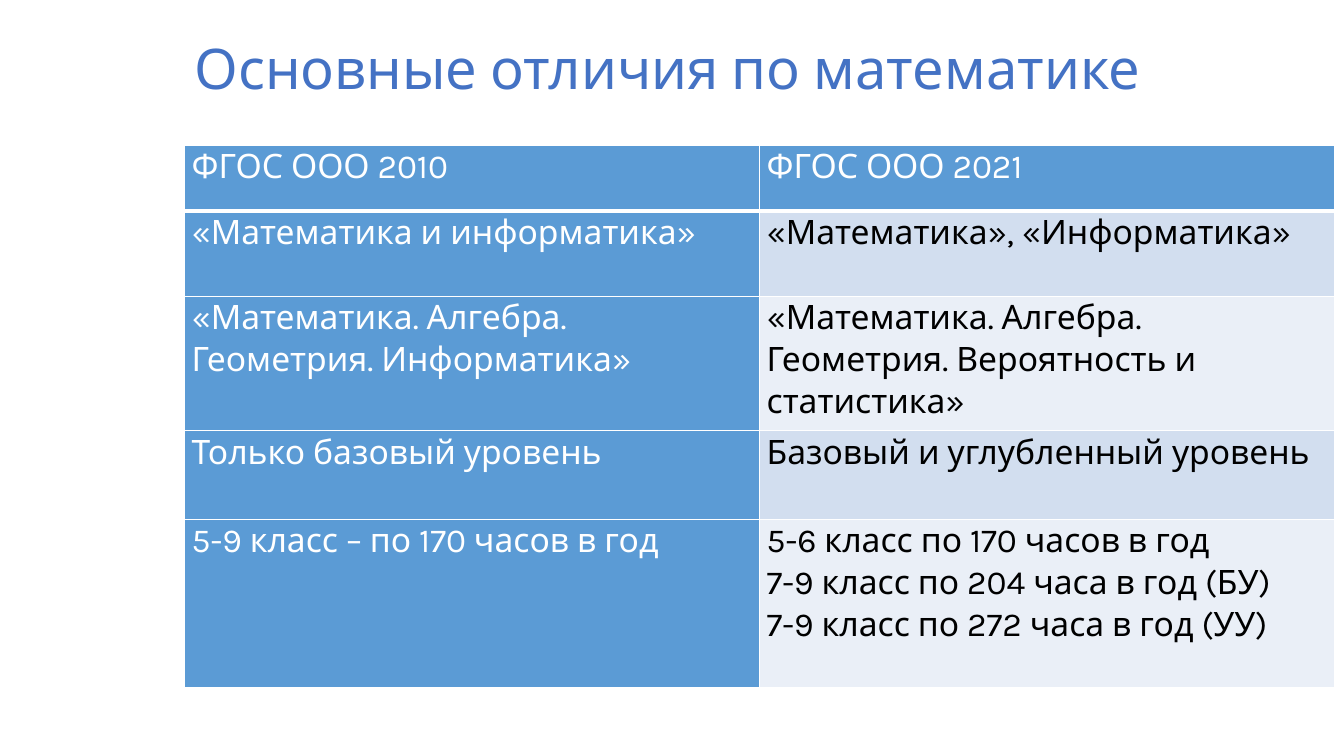
from dataclasses import dataclass

from lxml.etree import SubElement
from pptx import Presentation
from pptx.dml.color import RGBColor
from pptx.enum.text import MSO_ANCHOR, PP_ALIGN
from pptx.oxml.ns import qn
from pptx.slide import Slide
from pptx.table import _Cell as Cell
from pptx.text.text import TextFrame
from pptx.util import Cm, Pt

COLORS = {
    "title": "4472C4",
    "accent": "5B9BD5",
    "band": "D2DEEF",
    "light": "EAEFF7",
    "white": "FFFFFF",
    "black": "000000",
}
FONT_NAME = "Karla"
COLUMN_WIDTH = Cm(14.49)
CELL_MARGINS = {
    "margin_left": Cm(0.18),
    "margin_right": Cm(0.18),
    "margin_top": 0,
    "margin_bottom": 0,
}


@dataclass
class Comparison:
    height: float
    old_standard: str
    new_standard: str


COMPARISONS = [
    Comparison(1.65, "ФГОС ООО 2010", "ФГОС ООО 2021"),
    Comparison(2.16, "«Математика и информатика»", "«Математика», «Информатика»"),
    Comparison(
        3.38,
        "«Математика. Алгебра. Геометрия. Информатика»",
        "«Математика. Алгебра. Геометрия. Вероятность и статистика»",
    ),
    Comparison(2.24, "Только базовый уровень", "Базовый и углубленный уровень"),
    Comparison(
        4.24,
        "5-9 класс – по 170 часов в год",
        "5-6 класс по 170 часов в год\n"
        "7-9 класс по 204 часа в год (БУ)\n"
        "7-9 класс по 272 часа в год (УУ)",
    ),
]


def write_text(frame: TextFrame, text: str, size: int, color: str, spacing: float) -> None:
    frame.text = text
    paragraph_format = {"alignment": PP_ALIGN.LEFT, "line_spacing": spacing}
    font_format = {"name": FONT_NAME, "size": Pt(size), "bold": False}
    for paragraph in frame.paragraphs:
        for name, value in paragraph_format.items():
            setattr(paragraph, name, value)
        for run in paragraph.runs:
            for name, value in font_format.items():
                setattr(run.font, name, value)
            run.font.color.rgb = RGBColor.from_string(COLORS[color])


def set_borders(cell: Cell, bottom_width: int) -> None:
    properties = cell._tc.get_or_add_tcPr()
    widths = {"lnL": 1, "lnR": 1, "lnT": 1, "lnB": bottom_width}
    for position, (side, width) in enumerate(widths.items()):
        line = SubElement(properties, qn(f"a:{side}"), w=str(Pt(width)))
        fill = SubElement(line, qn("a:solidFill"))
        SubElement(fill, qn("a:srgbClr"), val=COLORS["white"])
        properties.insert(position, line)


def draw_cell(cell: Cell, text: str, row: int, column: int) -> None:
    is_heading = row == 0 or column == 0
    fill = "accent" if is_heading else "band" if row % 2 else "light"
    write_text(cell.text_frame, text, 24, "white" if is_heading else "black", 1.07)
    for name, value in CELL_MARGINS.items():
        setattr(cell, name, value)
    cell.fill.solid()
    cell.fill.fore_color.rgb = RGBColor.from_string(COLORS[fill])
    set_borders(cell, 3 if row == 0 else 1)


def draw_title(slide: Slide) -> None:
    title = slide.shapes.title
    bounds = {"left": Cm(4.65), "top": Cm(0.48), "width": Cm(29.21), "height": Cm(2.64)}
    for name, value in bounds.items():
        setattr(title, name, value)
    title.text_frame.vertical_anchor = MSO_ANCHOR.MIDDLE
    write_text(title.text_frame, "Основные отличия по математике", 40, "title", 0.9)


def draw_comparison_table(slide: Slide) -> None:
    height = Cm(sum(comparison.height for comparison in COMPARISONS))
    table = slide.shapes.add_table(
        len(COMPARISONS), 2, Cm(4.65), Cm(3.66), 2 * COLUMN_WIDTH, height
    ).table
    table.first_col = True
    for column in table.columns:
        column.width = COLUMN_WIDTH
    for row, comparison in enumerate(COMPARISONS):
        table.rows[row].height = Cm(comparison.height)
        for column, text in enumerate((comparison.old_standard, comparison.new_standard)):
            draw_cell(table.cell(row, column), text, row, column)


def main() -> None:
    presentation = Presentation()
    presentation.slide_width = Cm(33.87)
    presentation.slide_height = Cm(19.05)
    slide = presentation.slides.add_slide(presentation.slide_layouts[5])
    draw_title(slide)
    draw_comparison_table(slide)
    presentation.save("out.pptx")


if __name__ == "__main__":
    main()
